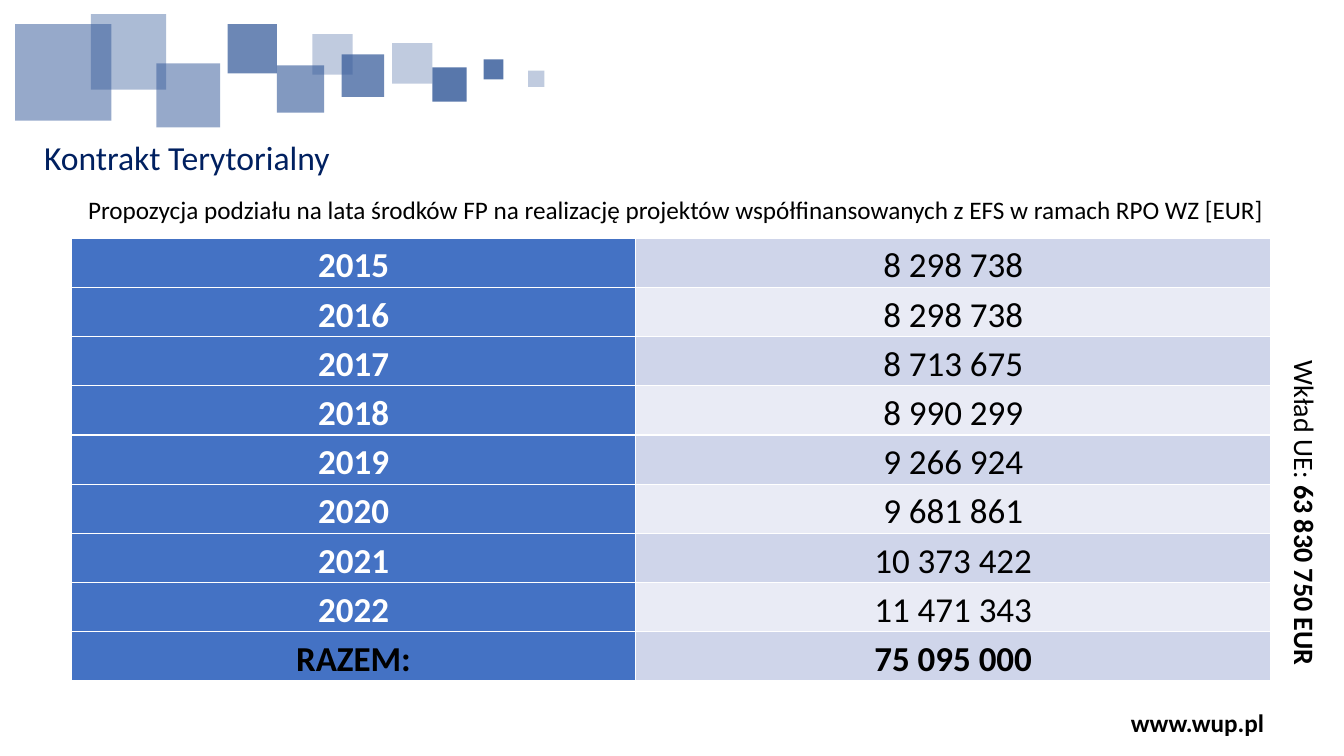
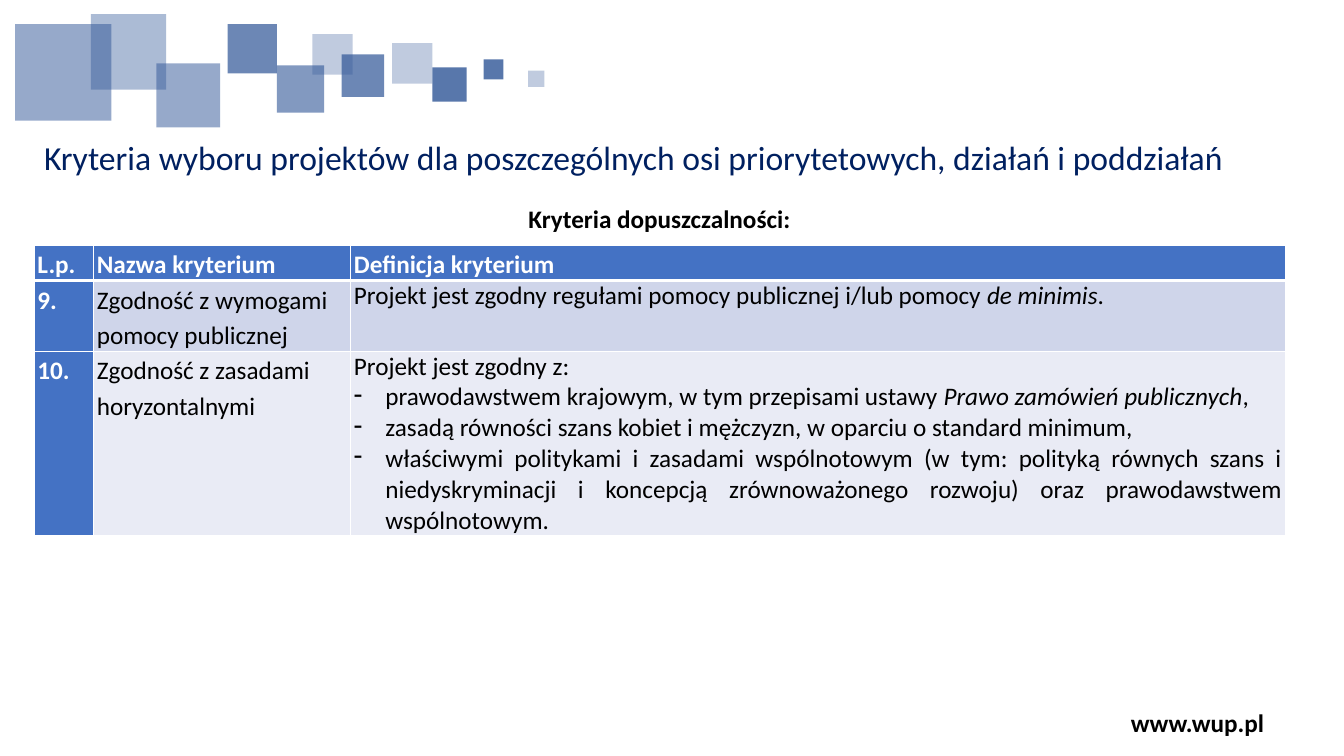
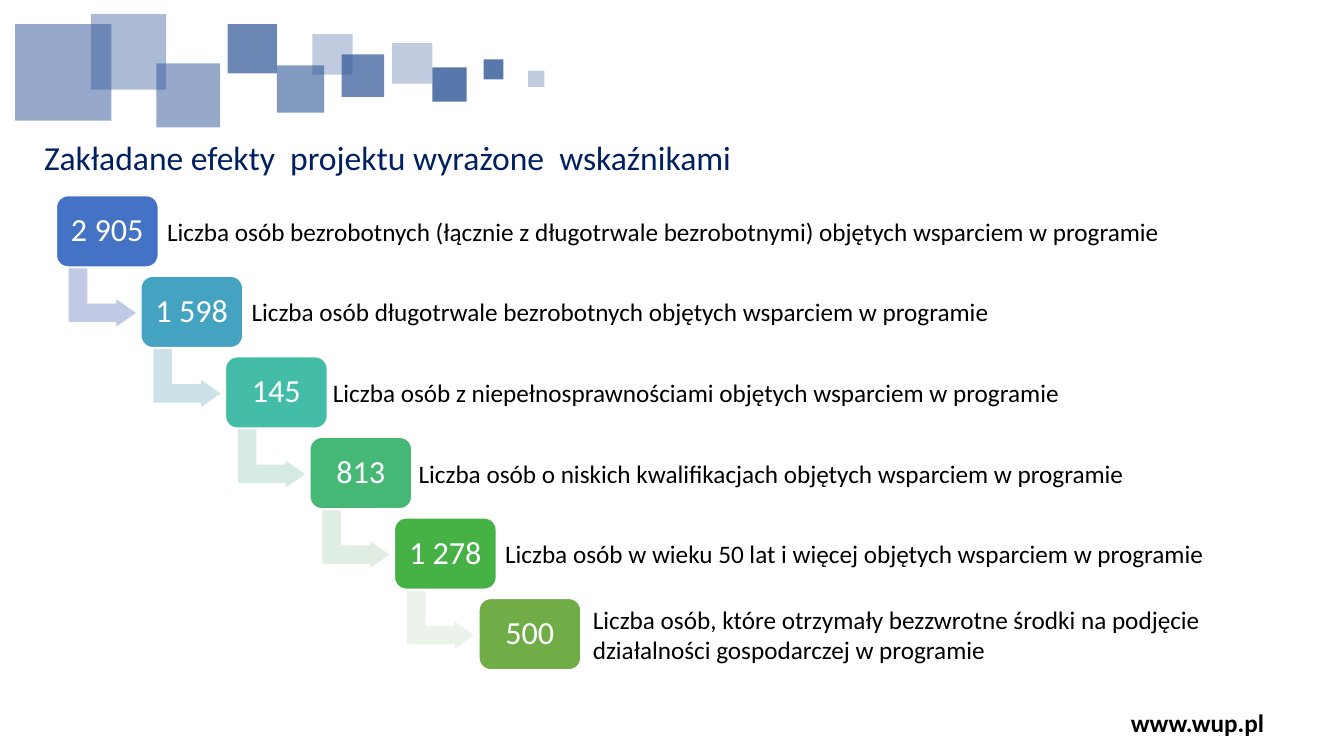
from collections import namedtuple
from dataclasses import dataclass

from lxml.etree import SubElement
from pptx import Presentation
from pptx.dml.color import RGBColor
from pptx.enum.shapes import MSO_SHAPE as SHAPE
from pptx.enum.text import MSO_ANCHOR as ANCHOR, PP_ALIGN as ALIGN
from pptx.oxml.ns import qn
from pptx.util import Cm, Pt


@dataclass(frozen=True)
class Theme:
    font: str = "Calibri"
    text: str = "000000"
    white: str = "FFFFFF"
    title: str = "002060"
    square: str = "2F5597"
    header: str = "4472C4"
    bands: tuple = ("CFD5EA", "E9EBF5")
    steps: tuple = ("4472C4", "44A3C0", "43BDA7", "44B874", "46B246", "70AD47")
    arrows: tuple = ("C1C9E4", "CBE0E7", "D6EAE5", "E0EDE3", "EBF2E9")
    body_size: int = 18
    side_size: int = 20
    step_size: int = 23
    title_size: int = 24
    figure_size: int = 25


THEME = Theme()
Box = namedtuple("Box", "left top width height")  # centimetres

SLIDE_WIDTH, SLIDE_HEIGHT = 33.87, 19.05
TITLE_BOX = Box(0.86, 3.45, 31.52, 1.4)
FOOTER_BOX = Box(26.37, 17.7, 7.62, 1.02)

# left, top, side, opacity in percent
SQUARES = [
    (9.88, 1.09, 1.02, 30), (10.9, 1.7, 0.86, 80), (8.61, 1.37, 1.07, 70),
    (0.38, 0.61, 2.43, 50), (6.98, 1.65, 1.19, 60), (3.94, 1.6, 1.61, 50),
    (2.29, 0.36, 1.9, 40), (12.19, 1.5, 0.5, 80), (5.74, 0.61, 1.24, 70),
    (7.87, 0.86, 1.02, 30), (13.31, 1.78, 0.41, 30),
]

YEARLY_FUNDS = [
    ("2015", "8 298 738"), ("2016", "8 298 738"), ("2017", "8 713 675"),
    ("2018", "8 990 299"), ("2019", "9 266 924"), ("2020", "9 681 861"),
    ("2021", "10 373 422"), ("2022", "11 471 343"), ("RAZEM:", "75 095 000"),
]

ITALIC = {"italic": True}
CRITERIA_HEAD = ("L.p.", "Nazwa kryterium", "Definicja kryterium")
# number, name, opening paragraph, bullets
CRITERIA = [
    ("9.", "Zgodność z wymogami pomocy publicznej",
     [("Projekt jest zgodny regułami pomocy publicznej i/lub pomocy ", {}),
      ("de minimis", ITALIC), (".", {})], []),
    ("10.", "Zgodność z zasadami horyzontalnymi", "Projekt jest zgodny z:", [
        [("prawodawstwem krajowym, w tym przepisami ustawy ", {}),
         ("Prawo zamówień publicznych", ITALIC), (",", {})],
        "zasadą równości szans kobiet i mężczyzn, w oparciu o standard minimum,",
        "właściwymi politykami i zasadami wspólnotowym (w tym: polityką równych "
        "szans i niedyskryminacji i koncepcją zrównoważonego rozwoju) oraz "
        "prawodawstwem wspólnotowym.",
    ]),
]

# figure, label, label offset from the step, label width
INDICATORS = [
    ("2 905", "Liczba osób bezrobotnych (łącznie z długotrwale bezrobotnymi) "
              "objętych wsparciem w programie", 2.54, 25.83),
    ("1 598", "Liczba osób długotrwale bezrobotnych objętych wsparciem w programie",
     2.54, 19.3),
    ("145", "Liczba osób z niepełnosprawnościami objętych wsparciem w programie",
     2.46, 19.18),
    ("813", "Liczba osób o niskich kwalifikacjach objętych wsparciem w programie",
     2.49, 18.44),
    ("1 278", "Liczba osób w wieku 50 lat i więcej objętych wsparciem w programie",
     2.54, 19.91),
    ("500", "Liczba osób, które otrzymały bezzwrotne środki na podjęcie "
            "działalności gospodarczej w programie", 2.62, 16.13),
]


def rgb(value):
    return RGBColor.from_string(value)


def in_cm(box):
    return [Cm(v) for v in box]


def write(p, runs, size=THEME.body_size, color=THEME.text, bold=False,
          align=ALIGN.LEFT, spacing=1.0):
    """Fill a paragraph with a string or a list of (text, font attributes)."""
    p.alignment, p.line_spacing = align, spacing
    for text, extra in [(runs, {})] if isinstance(runs, str) else runs:
        r = p.add_run()
        r.text = text
        r.font.color.rgb = rgb(color)
        fmt = {"name": THEME.font, "size": Pt(size), "bold": bold, **extra}
        for name, value in fmt.items():
            setattr(r.font, name, value)


def add_text(s, box, runs, anchor=ANCHOR.TOP, **fmt):
    sp = s.shapes.add_textbox(*in_cm(box))
    sp.text_frame.word_wrap = True
    sp.text_frame.vertical_anchor = anchor
    write(sp.text_frame.paragraphs[0], runs, **fmt)
    return sp


def add_filled(s, kind, box, fill, line=None):
    sp = s.shapes.add_shape(kind, *in_cm(box))
    sp.shadow.inherit = False
    sp.fill.solid()
    sp.fill.fore_color.rgb = rgb(fill)
    if line:
        sp.line.color.rgb = rgb(line)
        sp.line.width = Pt(1)
    else:
        sp.line.fill.background()
    return sp


def set_opacity(sp, percent):
    color = sp.fill._xPr.find(qn("a:solidFill"))[0]
    SubElement(color, qn("a:alpha"), val=str(percent * 1000))


def add_dash(p, indent=0.79):
    pPr = p._p.get_or_add_pPr()
    pPr.set("marL", str(Cm(indent)))
    pPr.set("indent", str(-Cm(indent)))
    SubElement(pPr, qn("a:buChar"), char="-")


def style_cell(cell, fill, margin, anchor, top=1, bottom=1):
    """Set fill, side margins and white borders (widths in points)."""
    cell.margin_left = cell.margin_right = Cm(margin)
    cell.margin_top = cell.margin_bottom = 0
    cell.vertical_anchor = anchor
    tcPr = cell._tc.get_or_add_tcPr()
    for side, width in (("L", 1), ("R", 1), ("T", top), ("B", bottom)):
        ln = SubElement(tcPr, qn(f"a:ln{side}"), w=str(Pt(width)))
        SubElement(SubElement(ln, qn("a:solidFill")), qn("a:srgbClr"), val=THEME.white)
    cell.fill.solid()
    cell.fill.fore_color.rgb = rgb(fill)


def add_grid(s, left, top, widths, heights):
    box = Box(left, top, sum(widths), sum(heights))
    table = s.shapes.add_table(len(heights), len(widths), *in_cm(box)).table
    table.first_row = table.horz_banding = False
    for column, width in zip(table.columns, widths):
        column.width = Cm(width)
    for row, height in zip(table.rows, heights):
        row.height = Cm(height)
    return table


def new_slide(prs, title):
    """Add a slide with the squares, the footer and its title."""
    s = prs.slides.add_slide(prs.slide_layouts[6])
    add_text(s, FOOTER_BOX, "www.wup.pl", ANCHOR.MIDDLE, bold=True, align=ALIGN.CENTER)
    for left, top, side, opacity in SQUARES:
        sp = add_filled(s, SHAPE.RECTANGLE, Box(left, top, side, side), THEME.square)
        set_opacity(sp, opacity)
    add_text(s, TITLE_BOX, title, size=THEME.title_size, color=THEME.title, spacing=0.9)
    return s


def add_funds_table(s, left, top):
    table = add_grid(s, left, top, [14.22, 16], [1.24] * len(YEARLY_FUNDS))
    for i, (year, amount) in enumerate(YEARLY_FUNDS):
        total = i == len(YEARLY_FUNDS) - 1
        year_color = THEME.text if total else THEME.white
        columns = [(year, THEME.header, year_color, True),
                   (amount, THEME.bands[i % 2], THEME.text, total)]
        for j, (text, fill, color, bold) in enumerate(columns):
            cell = table.cell(i, j)
            style_cell(cell, fill, 0.2, ANCHOR.MIDDLE)
            write(cell.text_frame.paragraphs[0], text, size=THEME.figure_size,
                  color=color, bold=bold, align=ALIGN.CENTER, spacing=1.15)


def add_criteria_table(s, left, top):
    table = add_grid(s, left, top, [1.5, 6.48, 23.55], [0.89, 1.78, 4.65])
    strong = {"color": THEME.white, "bold": True, "spacing": 1.15}
    for j, text in enumerate(CRITERIA_HEAD):
        cell = table.cell(0, j)
        style_cell(cell, THEME.header, 0.08, ANCHOR.TOP, bottom=3)
        write(cell.text_frame.paragraphs[0], text, **strong)
    for i, (number, name, opening, bullets) in enumerate(CRITERIA):
        band = THEME.bands[i % 2]
        columns = [(number, THEME.header, strong), (name, band, {"spacing": 1.15}),
                   (opening, band, {"align": ALIGN.JUSTIFY})]
        for j, (runs, fill, fmt) in enumerate(columns):
            cell = table.cell(i + 1, j)
            style_cell(cell, fill, 0.08, ANCHOR.TOP, top=1 if i else 3)
            write(cell.text_frame.paragraphs[0], runs, **fmt)
        for runs in bullets:
            p = table.cell(i + 1, 2).text_frame.add_paragraph()
            add_dash(p)
            write(p, runs, align=ALIGN.JUSTIFY)


def add_step(s, box, fill, figure):
    sp = add_filled(s, SHAPE.ROUNDED_RECTANGLE, box, fill, THEME.white)
    tf = sp.text_frame
    tf.margin_left = tf.margin_right = 0
    tf.vertical_anchor = ANCHOR.MIDDLE
    write(tf.paragraphs[0], figure, size=THEME.step_size, color=THEME.white,
          align=ALIGN.CENTER, spacing=0.9)


def add_step_arrow(s, step, fill):
    box = Box(step.left + 0.41, step.top + 1.7, 1.52, 1.75)
    sp = add_filled(s, SHAPE.BENT_UP_ARROW, box, fill, THEME.white)
    sp.rotation = 90
    for i, value in enumerate((0.33, 0.25, 0.36)):
        sp.adjustments[i] = value


def add_staircase(s, first, dx, dy):
    """Place the indicators as steps going down from the first box."""
    for i, (figure, label, offset, width) in enumerate(INDICATORS):
        step = first._replace(left=first.left + i * dx, top=first.top + i * dy)
        if i < len(THEME.arrows):
            add_step_arrow(s, step, THEME.arrows[i])
        add_step(s, step, THEME.steps[i], figure)
        label_box = step._replace(left=step.left + offset, width=width)
        add_text(s, label_box, label, ANCHOR.MIDDLE)


def funds_slide(prs):
    s = new_slide(prs, "Kontrakt Terytorialny")
    add_text(s, Box(1.27, 4.85, 31.52, 1.1),
             "Propozycja podziału na lata środków FP na realizację projektów "
             "współfinansowanych z EFS w ramach RPO WZ [EUR]",
             align=ALIGN.CENTER, spacing=0.9)
    add_funds_table(s, 1.8, 6)
    side = add_text(s, Box(27.89, 13.26, 9.98, 1.12),
                    [("Wkład UE: ", {}), ("63 830 750 EUR", {"bold": True})],
                    size=THEME.side_size)
    side.rotation = 90


def criteria_slide(prs):
    s = new_slide(prs, "Kryteria wyboru projektów dla poszczególnych osi "
                       "priorytetowych, działań i poddziałań")
    add_text(s, Box(0.86, 5.08, 31.52, 1.1), "Kryteria dopuszczalności:",
             bold=True, align=ALIGN.CENTER, spacing=0.9)
    add_criteria_table(s, 0.86, 6.18)


def indicators_slide(prs):
    s = new_slide(prs, "Zakładane efekty  projektu wyrażone  wskaźnikami")
    add_staircase(s, Box(1.42, 4.93, 2.57, 1.8), 2.13, 2.03)


def main():
    prs = Presentation()
    prs.slide_width, prs.slide_height = Cm(SLIDE_WIDTH), Cm(SLIDE_HEIGHT)
    for build in (funds_slide, criteria_slide, indicators_slide):
        build(prs)
    prs.save("out.pptx")


if __name__ == "__main__":
    main()
